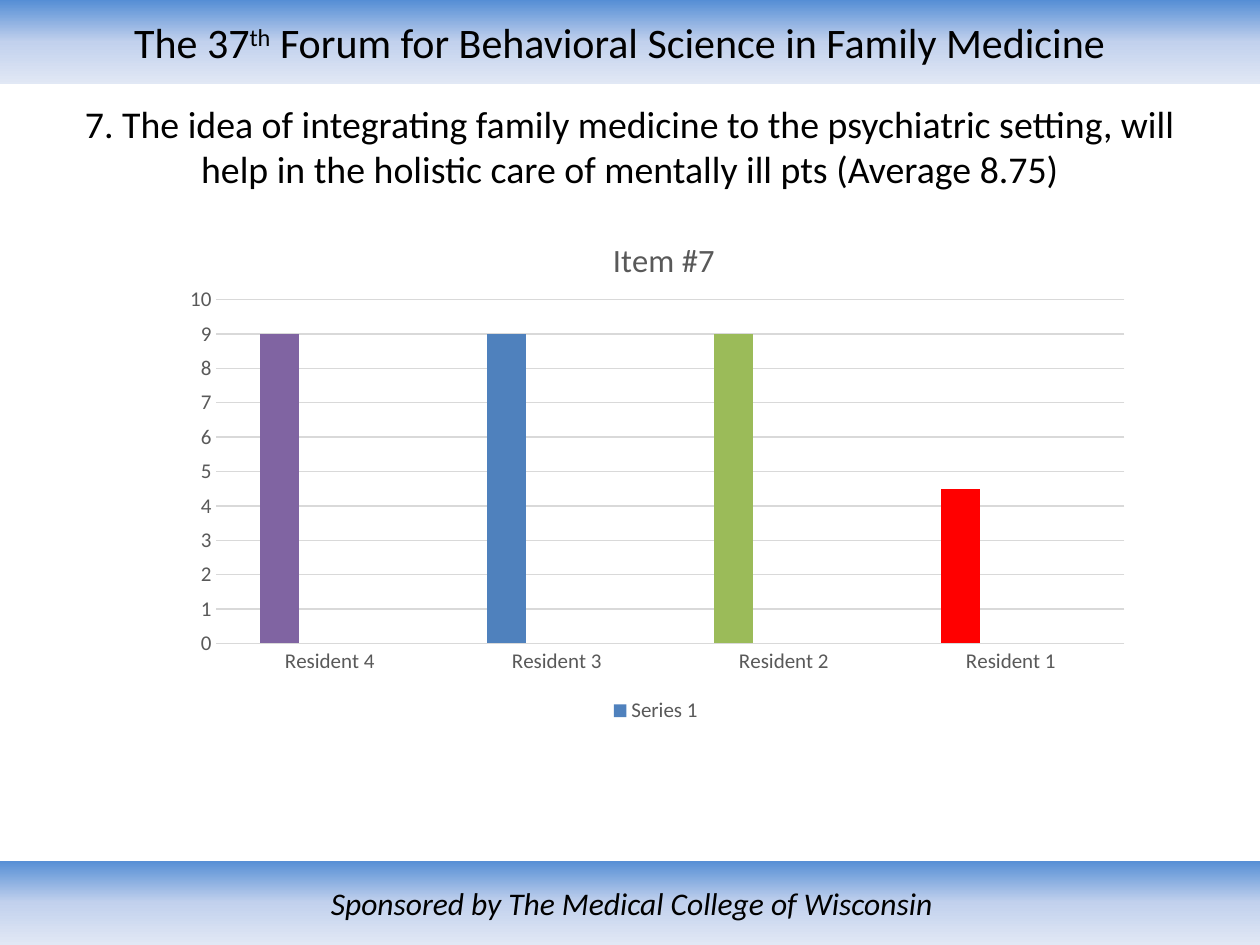
from lxml import etree
from pptx import Presentation
from pptx.chart.data import CategoryChartData
from pptx.dml.color import RGBColor
from pptx.enum.chart import XL_CHART_TYPE, XL_LEGEND_POSITION, XL_TICK_MARK
from pptx.enum.shapes import MSO_SHAPE
from pptx.enum.text import MSO_ANCHOR, MSO_AUTO_SIZE, PP_ALIGN
from pptx.oxml import parse_xml
from pptx.oxml.ns import nsdecls, qn
from pptx.util import Inches, Pt

COLUMN = XL_CHART_TYPE.COLUMN_CLUSTERED
BOTTOM = XL_LEGEND_POSITION.BOTTOM
NO_TICK = XL_TICK_MARK.NONE
RECT = MSO_SHAPE.RECTANGLE
MIDDLE = MSO_ANCHOR.MIDDLE
NO_FIT = MSO_AUTO_SIZE.NONE
CENTER = PP_ALIGN.CENTER

FONT = "Calibri"
BLACK = RGBColor(0x00, 0x00, 0x00)
GRAY = RGBColor(0x59, 0x59, 0x59)
GRID = RGBColor(0xD9, 0xD9, 0xD9)
BLUE = RGBColor(0x4F, 0x81, 0xBD)
BRICK = RGBColor(0xC0, 0x50, 0x4D)
GREEN = RGBColor(0x9B, 0xBB, 0x59)
PURPLE = RGBColor(0x80, 0x64, 0xA2)
RED = RGBColor(0xFF, 0x00, 0x00)
BAND_STOPS = [
    (0, RGBColor(0x55, 0x8E, 0xD5)),
    (50, RGBColor(0xC2, 0xD1, 0xED)),
    (100, RGBColor(0xE1, 0xE8, 0xF5)),
]

HEADER = ["The 37", ("th", 30), " Forum for Behavioral Science in Family Medicine"]
FOOTER = ["Sponsored by The Medical College of Wisconsin"]
TITLE = ["7. The idea of integrating family medicine to the psychiatric setting, "
         "will help in the holistic care of mentally ill pts (Average 8.75)"]
CHART_TITLE = "Item #7"
CATEGORIES = ["Resident 4", "Resident 3", "Resident 2", "Resident 1"]
SERIES = [
    ("Series 1", [9, 9, 9, 4.5], BLUE),
    ("Series 2", [None] * 4, BRICK),
    ("Series 3", [None] * 4, GREEN),
]
POINT_COLORS = {0: PURPLE, 2: GREEN, 3: RED}
HIDDEN_LEGEND_ENTRIES = [1, 2]

SLIDE_W, SLIDE_H, BAND_H = 10, 7.5, 0.67


def set_font(font, size, color=BLACK, italic=False):
    font.name, font.size = FONT, Pt(size)
    font.bold, font.italic = False, italic
    font.color.rgb = color


def write(s, parts, size, right=0.1, bottom=0.05, **style):
    """Fill a shape with one centred paragraph; a (text, percent) part is raised."""
    tf = s.text_frame
    tf.word_wrap, tf.auto_size, tf.vertical_anchor = True, NO_FIT, MIDDLE
    tf.margin_left, tf.margin_right = Inches(0.1), Inches(right)
    tf.margin_top, tf.margin_bottom = Inches(0.05), Inches(bottom)
    p = tf.paragraphs[0]
    p.alignment = CENTER
    for part in parts:
        text, raised = part if isinstance(part, tuple) else (part, 0)
        r = p.add_run()
        r.text = text
        set_font(r.font, size, **style)
        if raised:
            r.font._element.set("baseline", str(raised * 1000))


def add_band(slide, top, width):
    s = slide.shapes.add_shape(RECT, 0, Inches(top), Inches(width), Inches(BAND_H))
    s.shadow.inherit = False
    s.line.fill.background()
    s.fill.gradient()
    s.fill.gradient_angle = 270
    stops = s._element.spPr.find(qn("a:gradFill")).find(qn("a:gsLst"))
    for stop in list(stops):
        stops.remove(stop)
    for share, color in BAND_STOPS:
        stop = etree.SubElement(stops, qn("a:gs"), pos=str(share * 1000))
        etree.SubElement(stop, qn("a:srgbClr"), val=str(color))
    return s


def layout(x, y, w=None, h=None):
    """Manual chart layout in shares of the chart's size."""
    target = '<c:layoutTarget val="inner"/>' if w else ""
    values = f'<c:x val="{x}"/><c:y val="{y}"/>'
    if w:
        values += f'<c:w val="{w}"/><c:h val="{h}"/>'
    return parse_xml(
        f'<c:layout {nsdecls("c")}><c:manualLayout>{target}<c:xMode val="edge"/>'
        f'<c:yMode val="edge"/>{values}</c:manualLayout></c:layout>')


def place(parent, new, index):
    old = parent.find(qn("c:layout"))
    if old is not None:
        parent.remove(old)
    parent.insert(index, new)


def add_ratings_chart(slide):
    data = CategoryChartData()
    data.categories = CATEGORIES
    for name, values, _ in SERIES:
        data.add_series(name, values)
    chart = slide.shapes.add_chart(COLUMN, Inches(1.33), Inches(1.58),
                                   Inches(7.75), Inches(4.2), data).chart
    set_font(chart.font, 12, GRAY)

    chart.has_title = True
    p = chart.chart_title.text_frame.paragraphs[0]
    r = p.add_run()
    r.text = CHART_TITLE
    set_font(r.font, 18.6, GRAY)
    place(chart.chart_title._element, layout(0.45, 0.06), 1)

    plot = chart.plots[0]
    plot.gap_width, plot.overlap, plot.vary_by_categories = 219, -27, False
    place(plot._element.getparent(), layout(0.05, 0.19, 0.93, 0.65), 0)
    for series, (_, _, color) in zip(plot.series, SERIES):
        series.format.fill.solid()
        series.format.fill.fore_color.rgb = color
    for i, color in POINT_COLORS.items():
        fill = plot.series[0].points[i].format.fill
        fill.solid()
        fill.fore_color.rgb = color

    for axis in (chart.category_axis, chart.value_axis):
        axis.major_tick_mark = axis.minor_tick_mark = NO_TICK
        set_font(axis.tick_labels.font, 12, GRAY)
    axis = chart.value_axis
    axis.minimum_scale, axis.maximum_scale, axis.major_unit = 0, 10, 1
    axis.format.line.fill.background()
    for line in (chart.category_axis.format.line, axis.major_gridlines.format.line):
        line.color.rgb = GRID
        line.width = Pt(0.75)

    chart.has_legend = True
    legend = chart.legend
    legend.position, legend.include_in_layout = BOTTOM, False
    set_font(legend.font, 12, GRAY)
    for n, i in enumerate(HIDDEN_LEGEND_ENTRIES, 1):
        legend._element.insert(n, parse_xml(
            f'<c:legendEntry {nsdecls("c")}><c:idx val="{i}"/>'
            '<c:delete val="1"/></c:legendEntry>'))


def main():
    prs = Presentation()
    prs.slide_width, prs.slide_height = Inches(SLIDE_W), Inches(SLIDE_H)
    slide = prs.slides.add_slide(prs.slide_layouts[5])

    write(add_band(slide, 0, SLIDE_W), HEADER, 24, right=0.26)
    write(add_band(slide, SLIDE_H - BAND_H, 10.03), FOOTER, 18, italic=True)

    title = slide.shapes.title
    title.left, title.top = Inches(0.5), Inches(0.92)
    title.width, title.height = Inches(9), Inches(0.83)
    write(title, TITLE, 21.6, bottom=0.41)

    add_ratings_chart(slide)
    prs.save("out.pptx")


if __name__ == "__main__":
    main()
